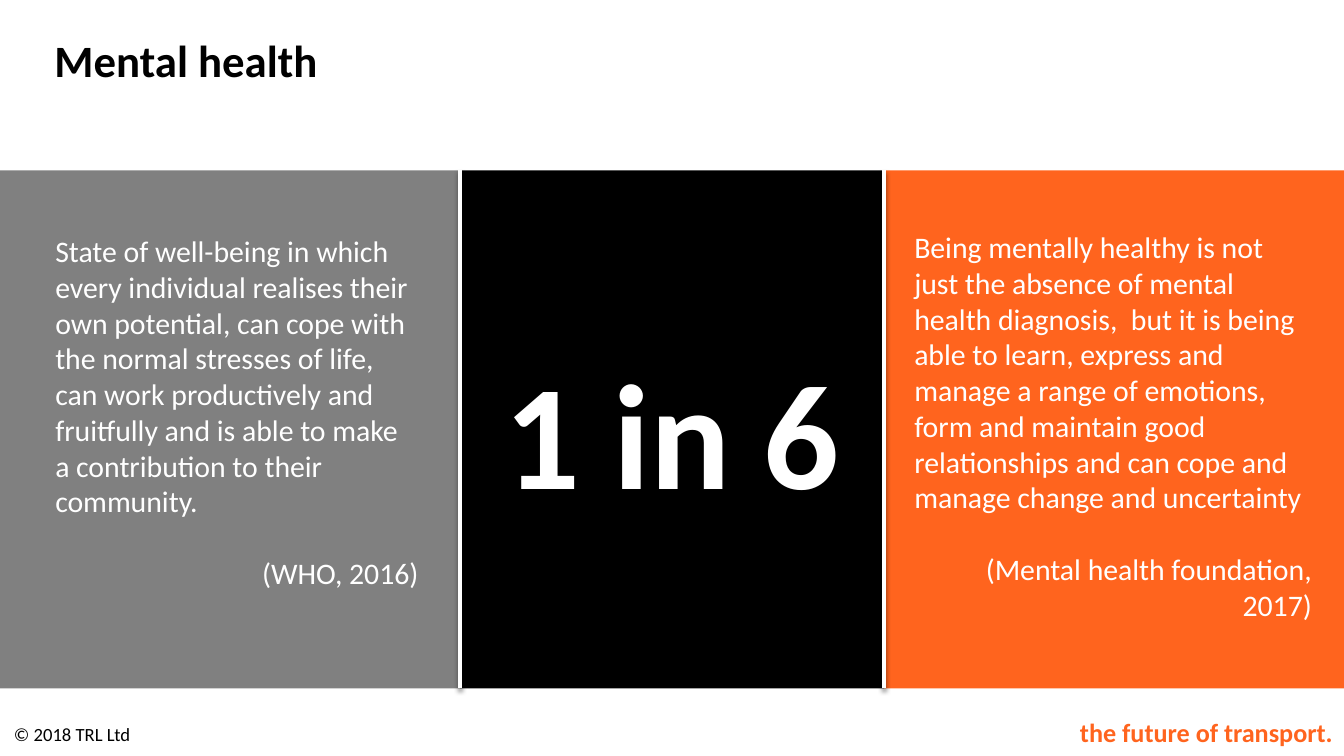
from lxml.etree import SubElement
from pptx import Presentation
from pptx.dml.color import RGBColor
from pptx.enum.shapes import MSO_CONNECTOR, MSO_SHAPE
from pptx.enum.text import MSO_ANCHOR, PP_ALIGN
from pptx.oxml.ns import qn
from pptx.util import Inches, Pt

BLACK = RGBColor(0x00, 0x00, 0x00)
WHITE = RGBColor(0xFF, 0xFF, 0xFF)
GREY = RGBColor(0x80, 0x80, 0x80)
ORANGE = RGBColor(0xFF, 0x64, 0x1E)

WIDTH, TOP, HIGH = 13.33, 1.69, 5.14
LEFT, RIGHT = 4.56, 8.77  # edges of the middle panel

WHO = ("State of well-being in which every individual realises their own "
       "potential, can cope with the normal stresses of life, can work "
       "productively and fruitfully and is able to make a contribution to "
       "their community.")
BEING = ("Being mentally healthy is not just the absence of mental health "
         "diagnosis,  but it is being able to learn, express and manage a "
         "range of emotions, form and maintain good relationships and can "
         "cope and manage change and uncertainty")


class Deck:
    def __init__(self, show):
        self.face = "Calibri"
        self.slide = show.slides.add_slide(show.slide_layouts[5])

    def label(self, para, text, align=PP_ALIGN.LEFT, **form):
        para.text = text
        para.alignment = align
        color = form.pop("color", WHITE)
        for key, value in {"name": self.face, **form}.items():
            setattr(para.font, key, value)
        para.font.color.rgb = color

    def title(self, text, box, **form):
        head = self.slide.shapes.title
        for key, value in zip(("left", "top", "width", "height"), box):
            setattr(head, key, Inches(value))
        head.text_frame.vertical_anchor = MSO_ANCHOR.MIDDLE
        self.label(head.text_frame.paragraphs[0], text, **form)

    def text(self, text, box, anchor=MSO_ANCHOR.TOP, **form):
        frame = self.slide.shapes.add_textbox(*map(Inches, box)).text_frame
        frame.word_wrap = True
        frame.vertical_anchor = anchor
        self.label(frame.paragraphs[0], text, **form)
        return frame

    def quote(self, text, source, box):
        size = Pt(21.3)
        frame = self.text(text, box, size=size)
        para = frame.add_paragraph()
        para.space_before = Pt(26)
        self.label(para, source, PP_ALIGN.RIGHT, size=size)

    def panel(self, left, right, fill):
        box = (left, TOP, right - left, HIGH)
        rect = self.slide.shapes.add_shape(MSO_SHAPE.RECTANGLE, *map(Inches, box))
        rect.shadow.inherit = False
        rect.fill.solid()
        rect.fill.fore_color.rgb = fill
        rect.line.fill.background()
        return rect

    def rule(self, x):
        ends = map(Inches, (x, TOP, x, TOP + HIGH))
        line = self.slide.shapes.add_connector(MSO_CONNECTOR.STRAIGHT, *ends)
        line.line.color.rgb = WHITE
        line.line.width = Pt(3)
        # Soft shadow below the line
        effect = SubElement(line._element.spPr, qn("a:effectLst"))
        shade = SubElement(effect, qn("a:outerShdw"), blurRad=str(Pt(3.1)),
                           dist=str(Pt(1.6)), dir="5400000", rotWithShape="0")
        tone = SubElement(shade, qn("a:srgbClr"), val=str(BLACK))
        SubElement(tone, qn("a:alpha"), val="38000")


def main():
    show = Presentation()
    show.slide_width, show.slide_height = Inches(WIDTH), Inches(7.5)
    deck = Deck(show)

    # Footer and title
    deck.text("the future of transport.", (10.42, 7.06, 2.9, 0.42),
              align=PP_ALIGN.RIGHT, size=Pt(18.7), bold=True, color=ORANGE)
    deck.text("© 2018 TRL Ltd", (0.04, 7.12, 2.18, 0.33), MSO_ANCHOR.MIDDLE,
              size=Pt(13.3), color=BLACK)
    deck.title("Mental health", (0.44, 0.14, 9.98, 0.9),
               size=Pt(32), bold=True, color=BLACK)

    # Three panels, the middle one with the key figure
    middle = deck.panel(LEFT, RIGHT, BLACK)
    middle.text_frame.vertical_anchor = MSO_ANCHOR.MIDDLE
    deck.label(middle.text_frame.paragraphs[0], "1 in 6", PP_ALIGN.CENTER,
               size=Pt(106.7), bold=True)
    deck.panel(0, LEFT, GREY)
    deck.panel(RIGHT, WIDTH, ORANGE)

    # Quotes on the outer panels
    deck.quote(WHO, "(WHO, 2016)", (0.45, 2.26, 3.8, 3.69))
    deck.quote(BEING, "(Mental health foundation, 2017)",
               (8.97, 2.22, 4.14, 4.05))

    # White rules between the panels
    for x in (LEFT, RIGHT):
        deck.rule(x)

    show.save("out.pptx")


if __name__ == "__main__":
    main()
